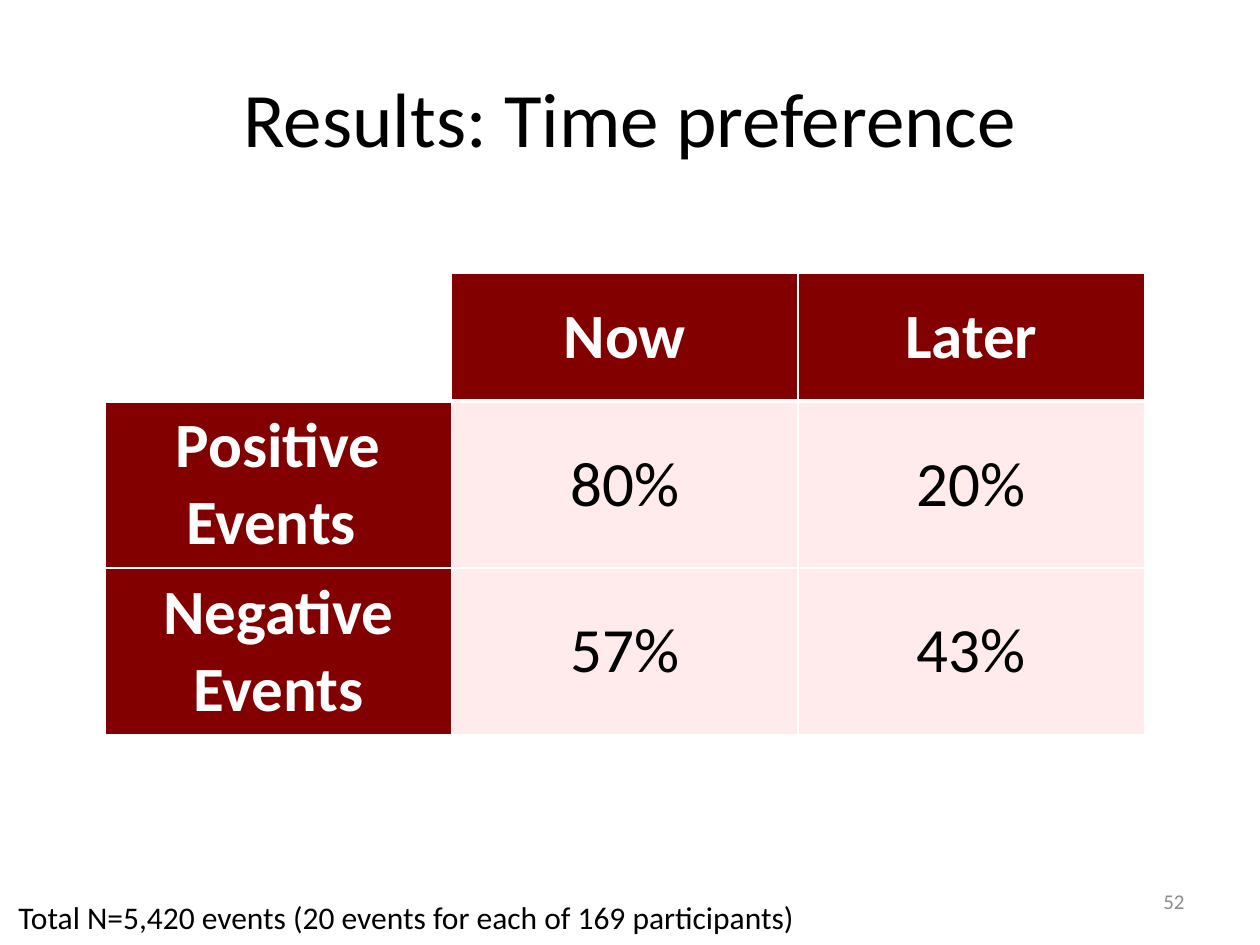
import pptx
import pptx.dml.color
import pptx.enum.text
import pptx.oxml
import pptx.oxml.ns
import pptx.util

Pt = pptx.util.Pt
RGBColor = pptx.dml.color.RGBColor
ALIGN = pptx.enum.text.PP_ALIGN
MIDDLE = pptx.enum.text.MSO_ANCHOR.MIDDLE

BLACK = RGBColor(0x00, 0x00, 0x00)
WHITE = RGBColor(0xFF, 0xFF, 0xFF)
GREY = RGBColor(0x8C, 0x8C, 0x8C)
MAROON = RGBColor(0x82, 0x00, 0x00)
PINK = RGBColor(0xFF, 0xEB, 0xEB)


def write(frame, text, color, align, **font_format):
    frame.text = text
    para = frame.paragraphs[0]
    para.alignment = align
    font = para.runs[0].font
    font.color.rgb = color
    for name, value in {"name": "Calibri", "bold": False, **font_format}.items():
        setattr(font, name, value)


def add_borders(cell, widths):
    """Draw white cell borders; widths maps the sides L, R, T, B to points."""
    properties = cell._tc.get_or_add_tcPr()
    for index, (side, width) in enumerate(widths.items()):
        line = pptx.oxml.parse_xml(
            f'<a:ln{side} {pptx.oxml.ns.nsdecls("a")} w="{Pt(width)}">'
            f'<a:solidFill><a:srgbClr val="{WHITE}"/></a:solidFill></a:ln{side}>'
        )
        properties.insert(index, line)


deck = pptx.Presentation()
deck.slide_width, deck.slide_height = Pt(720), Pt(540)
page = deck.slides.add_slide(deck.slide_layouts[5])

title = page.shapes.title
title.left, title.top, title.width, title.height = Pt(36), Pt(21.6), Pt(648), Pt(90)
title.text_frame.vertical_anchor = MIDDLE
write(title.text_frame, "Results: Time preference", BLACK, ALIGN.CENTER, size=Pt(44))

# Preference table
rows = [
    ["", "Now", "Later"],
    ["Positive Events ", "80%", "20%"],
    ["Negative Events", "57%", "43%"],
]
row_heights = [73.2, 93.6, 93.6]
table = page.shapes.add_table(
    len(rows), len(rows[0]), Pt(60), Pt(156), Pt(594), Pt(sum(row_heights))
).table
for column in table.columns:
    column.width = Pt(198)

for r, texts in enumerate(rows):
    table.rows[r].height = Pt(row_heights[r])
    for c, text in enumerate(texts):
        cell = table.cell(r, c)
        is_heading = r == 0 or c == 0
        cell.vertical_anchor = MIDDLE
        cell.fill.solid()
        cell.fill.fore_color.rgb = (MAROON if is_heading else PINK) if text else WHITE
        if text:
            write(cell.text_frame, text, WHITE if is_heading else BLACK,
                  ALIGN.CENTER, size=Pt(36), bold=is_heading)
        add_borders(cell, {"L": 1, "R": 1, "T": 3 if r == 1 else 1, "B": 3 if r == 0 else 1})

# Page number and sample note
number_box = page.shapes.add_textbox(Pt(516), Pt(500.4), Pt(168), Pt(28.8))
number_box.text_frame.vertical_anchor = MIDDLE
write(number_box.text_frame, "52", GREY, ALIGN.RIGHT, size=Pt(12))

note_box = page.shapes.add_textbox(Pt(0.7), Pt(509.8), Pt(463), Pt(28.8))
note_box.text_frame.word_wrap = False
write(note_box.text_frame, "Total N=5,420 events (20 events for each of 169 participants)",
      BLACK, ALIGN.CENTER, size=Pt(18))

deck.save("out.pptx")
